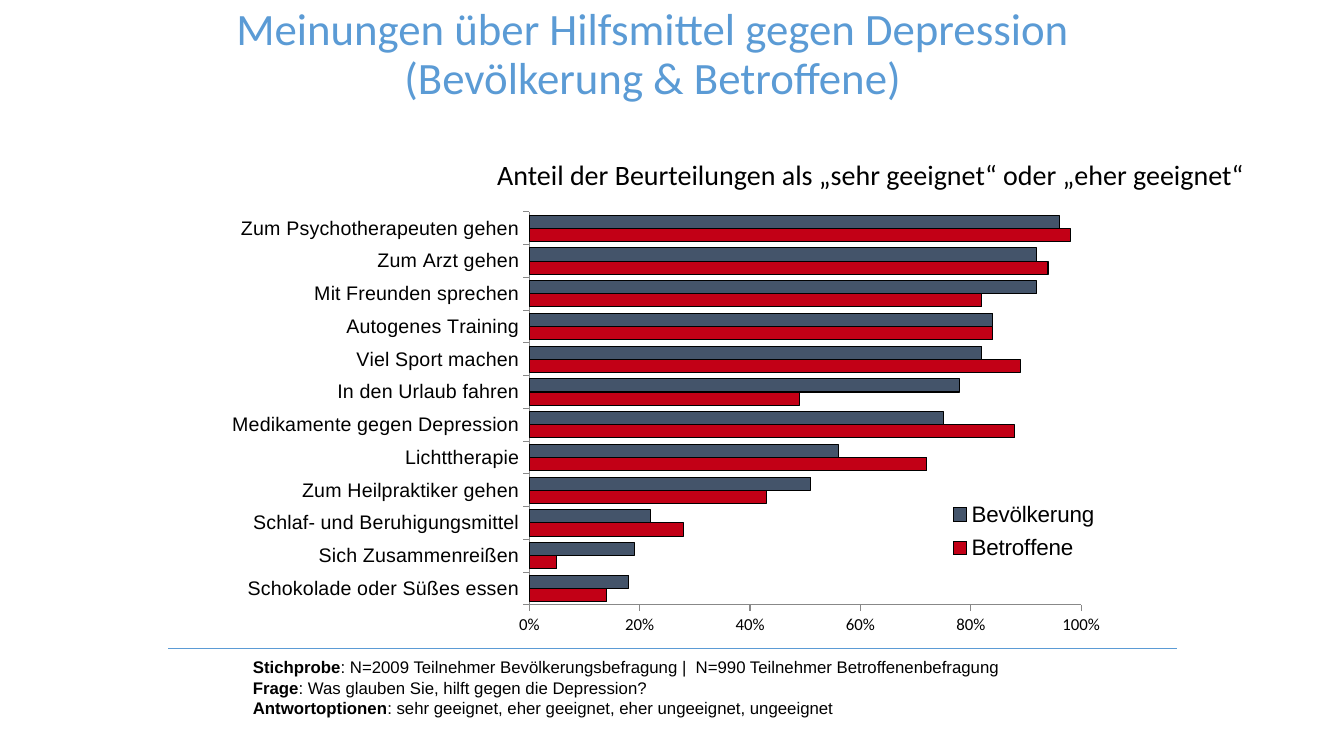
from lxml.etree import SubElement
from pptx import Presentation
from pptx.chart.data import CategoryChartData
from pptx.dml.color import RGBColor
from pptx.enum.chart import XL_CHART_TYPE, XL_LEGEND_POSITION, XL_TICK_LABEL_POSITION, XL_TICK_MARK
from pptx.enum.shapes import MSO_CONNECTOR
from pptx.enum.text import MSO_ANCHOR, MSO_AUTO_SIZE, PP_ALIGN
from pptx.oxml import parse_xml
from pptx.oxml.ns import nsdecls, qn
from pptx.util import Inches, Pt

TITLE = "Meinungen über Hilfsmittel gegen Depression (Bevölkerung & Betroffene)"
SUBTITLE = "Anteil der Beurteilungen als „sehr geeignet“ oder „eher geeignet“"
GROUPS = [("Betroffene", "C20016"), ("Bevölkerung", "44546A")]
RATINGS = [
    ("Schokolade oder Süßes essen", 0.14, 0.18),
    ("Sich Zusammenreißen", 0.05, 0.19),
    ("Schlaf- und Beruhigungsmittel", 0.28, 0.22),
    ("Zum Heilpraktiker gehen", 0.43, 0.51),
    ("Lichttherapie", 0.72, 0.56),
    ("Medikamente gegen Depression", 0.88, 0.75),
    ("In den Urlaub fahren", 0.49, 0.78),
    ("Viel Sport machen", 0.89, 0.82),
    ("Autogenes Training", 0.84, 0.84),
    ("Mit Freunden sprechen", 0.82, 0.92),
    ("Zum Arzt gehen", 0.94, 0.92),
    ("Zum Psychotherapeuten gehen", 0.98, 0.96),
]
NOTES = [
    ("Stichprobe", ": N=2009 Teilnehmer Bevölkerungsbefragung |  N=990 Teilnehmer Betroffenenbefragung"),
    ("Frage", ": Was glauben Sie, hilft gegen die Depression?"),
    ("Antwortoptionen", ": sehr geeignet, eher geeignet, eher ungeeignet, ungeeignet"),
]
BLUE, BLACK, AXIS = "5B9BD5", "000000", "888888"
PLOT_AREA = (0.354, 0.037, 0.615, 0.884)
LEGEND_AREA = (0.82, 0.67, 0.17, 0.17)


def color(value):
    return RGBColor.from_string(value)


def style(font, size, name, value=BLACK, bold=False):
    font.size, font.name, font.bold = Pt(size), name, bold
    font.color.rgb = color(value)


def place(box, left, top, width, height):
    box.left, box.top, box.width, box.height = map(Inches, (left, top, width, height))


def write(box, lines, size, name, value=BLACK, align=PP_ALIGN.LEFT, spacing=1.0, before=0):
    frame = box.text_frame
    frame.word_wrap = True
    frame.auto_size = MSO_AUTO_SIZE.NONE
    frame.vertical_anchor = MSO_ANCHOR.TOP
    for index, spans in enumerate(lines):
        para = frame.add_paragraph() if index else frame.paragraphs[0]
        para.alignment, para.line_spacing, para.space_before = align, spacing, Pt(before)
        properties = para._p.get_or_add_pPr()
        properties.set("marL", "0")
        properties.set("indent", "0")
        SubElement(properties, qn("a:buNone"))
        for text, bold in spans:
            span = para.add_run()
            span.text = text
            style(span.font, size, name, value, bold)


def manual_layout(area, inner=False):
    target = '<c:layoutTarget val="inner"/>' if inner else ""
    modes = "".join(f'<c:{axis}Mode val="edge"/>' for axis in "xy")
    sizes = "".join(f'<c:{key} val="{share}"/>' for key, share in zip("xywh", area))
    return parse_xml(f'<c:layout {nsdecls("c")}><c:manualLayout>{target}{modes}{sizes}'
                     "</c:manualLayout></c:layout>")


def set_layout(element, layout, position):
    for old in element.findall(qn("c:layout")):
        element.remove(old)
    element.insert(position, layout)


def format_axis(axis, size, name):
    axis.has_major_gridlines = False
    axis.major_tick_mark = XL_TICK_MARK.OUTSIDE
    axis.minor_tick_mark = XL_TICK_MARK.NONE
    axis.tick_label_position = XL_TICK_LABEL_POSITION.LOW
    axis.format.line.color.rgb = color(AXIS)
    axis.format.line.width = Pt(0.75)
    style(axis.tick_labels.font, size, name)


def add_ratings(page):
    data = CategoryChartData(number_format="0%")
    data.categories = [row[0] for row in RATINGS]
    for column, (group, _) in enumerate(GROUPS, 1):
        data.add_series(group, [row[column] for row in RATINGS])
    chart = page.shapes.add_chart(XL_CHART_TYPE.BAR_CLUSTERED, Inches(2.1), Inches(1.94),
                                  Inches(8.9), Inches(4.41), data).chart
    chart.has_title = False
    style(chart.font, 18, "Calibri")
    plot = chart.plots[0]
    plot.gap_width, plot.overlap, plot.vary_by_categories = 50, 0, False
    for series, (_, fill) in zip(plot.series, GROUPS):
        series.format.fill.solid()
        series.format.fill.fore_color.rgb = color(fill)
        series.format.line.color.rgb = color(BLACK)
        series.format.line.width = Pt(0.75)
    format_axis(chart.category_axis, 14, "Arial")
    shares = chart.value_axis
    format_axis(shares, 12, "Calibri")
    shares.minimum_scale, shares.maximum_scale, shares.major_unit = 0, 1, 0.2
    shares.tick_labels.number_format = "0%"
    shares.tick_labels.number_format_is_linked = False
    chart.has_legend = True
    legend = chart.legend
    legend.position = XL_LEGEND_POSITION.RIGHT
    legend.include_in_layout = True
    style(legend.font, 16, "Arial")
    set_layout(legend._element, manual_layout(LEGEND_AREA), 1)
    set_layout(chart._chartSpace.chart.plotArea, manual_layout(PLOT_AREA, inner=True), 0)


def main():
    deck = Presentation()
    deck.slide_width, deck.slide_height = Inches(13.33), Inches(7.5)
    page = deck.slides.add_slide(deck.slide_layouts[1])
    title, subtitle = page.placeholders
    place(title, 1.67, 0.02, 9.61, 0.87)
    write(title, [[(TITLE, False)]], 32, "Calibri", BLUE, PP_ALIGN.CENTER, 0.9)
    place(subtitle, 0.89, 1.55, 11.55, 0.39)
    write(subtitle, [[(SUBTITLE, False)]], 20, "Calibri", align=PP_ALIGN.RIGHT, spacing=0.9)
    add_ratings(page)
    notes = page.shapes.add_textbox(*map(Inches, (2.41, 6.47, 8.66, 0.71)))
    write(notes, [[(label, True), (text, False)] for label, text in NOTES], 12, "Arial")
    rule = page.shapes.add_connector(MSO_CONNECTOR.STRAIGHT,
                                     *map(Inches, (1.67, 6.43, 11.67, 6.43)))
    rule.line.color.rgb = color(BLUE)
    rule.line.width = Pt(0.5)
    SubElement(rule._element.spPr, qn("a:effectLst"))
    deck.save("out.pptx")


if __name__ == "__main__":
    main()
